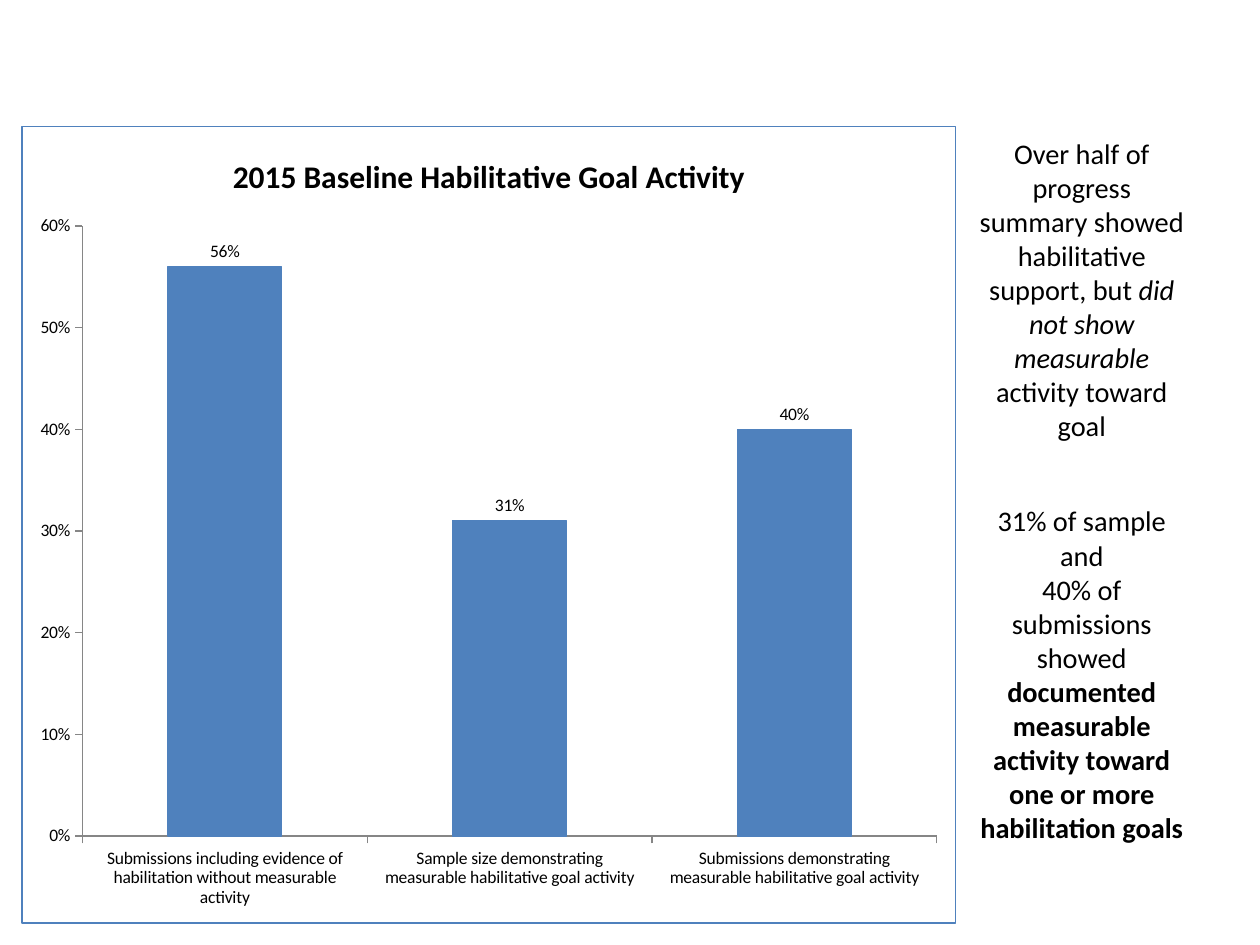
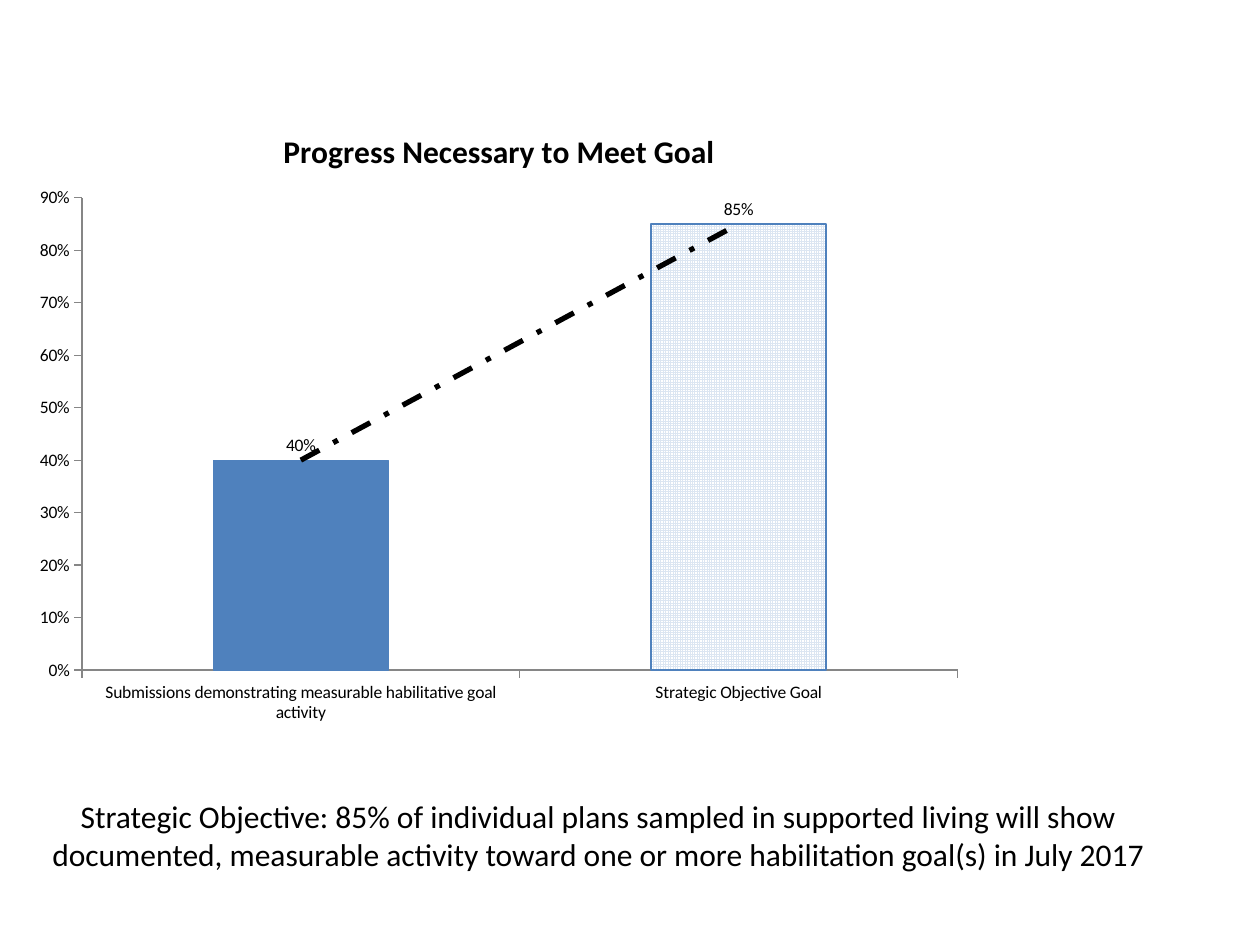
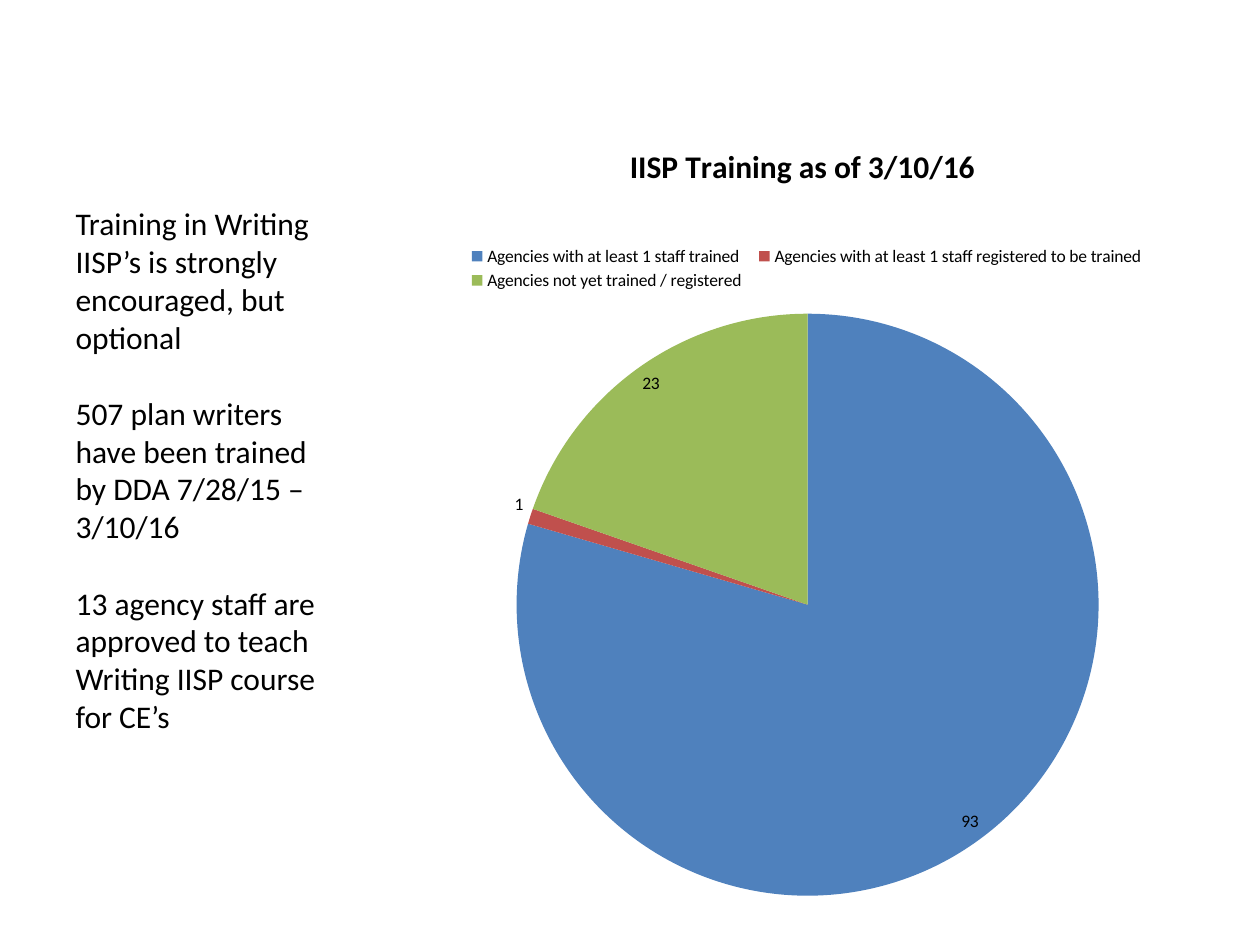
from dataclasses import dataclass

from lxml import etree
from pptx import Presentation
from pptx.chart.data import CategoryChartData
from pptx.dml.color import RGBColor
from pptx.enum.chart import XL_CHART_TYPE as ChartType
from pptx.enum.chart import XL_LABEL_POSITION as LabelPosition
from pptx.enum.chart import XL_LEGEND_POSITION as LegendPosition
from pptx.enum.chart import XL_TICK_MARK as TickMark
from pptx.enum.dml import MSO_PATTERN as Pattern
from pptx.enum.text import MSO_ANCHOR as Anchor
from pptx.enum.text import MSO_AUTO_SIZE as AutoSize
from pptx.enum.text import PP_ALIGN as Align
from pptx.oxml import parse_xml
from pptx.oxml.ns import nsdecls, qn
from pptx.util import Inches, Pt


@dataclass(frozen=True)
class Theme:
    font: str = "Calibri"
    text: RGBColor = RGBColor(0, 0, 0)
    blue: RGBColor = RGBColor(0x4F, 0x81, 0xBD)
    red: RGBColor = RGBColor(0xC0, 0x50, 0x4D)
    green: RGBColor = RGBColor(0x9B, 0xBB, 0x59)
    pale: RGBColor = RGBColor(0xDC, 0xE6, 0xF2)
    white: RGBColor = RGBColor(0xFF, 0xFF, 0xFF)
    axis: RGBColor = RGBColor(0x86, 0x86, 0x86)
    title_size: float = 18
    narrow_size: float = 16.2
    chart_size: float = 10
    thin: float = 0.75


THEME = Theme()
TITLE_ONLY = 5


def style_font(font, size, bold=None):
    font.name = THEME.font
    font.size = Pt(size)
    font.color.rgb = THEME.text
    font.bold = bold


def add_slide(deck):
    return deck.slides.add_slide(deck.slide_layouts[TITLE_ONLY])


def write_title(slide, rect, paragraphs, size=THEME.title_size,
                align=Align.CENTER, top_margin=None):
    """Fill the title with (space before, spans); each span is (words, style).

    The text is centred vertically unless top_margin is given.
    """
    box = slide.shapes.title
    box.left, box.top, box.width, box.height = map(Inches, rect)
    frame = box.text_frame
    frame.word_wrap = True
    frame.auto_size = AutoSize.NONE
    frame.vertical_anchor = Anchor.MIDDLE
    if top_margin is not None:
        frame.vertical_anchor = Anchor.TOP
        frame.margin_top = Inches(top_margin)
    for number, (space, spans) in enumerate(paragraphs):
        para = frame.add_paragraph() if number else frame.paragraphs[0]
        para.alignment = align
        para.space_before = Pt(space)
        style_font(para.font, size)
        for words, style in spans:
            run = para.add_run()
            run.text = words
            style_font(run.font, size)
            if style:
                setattr(run.font, style, True)


def set_layout(part, index, chart_rect, rect, target=""):
    """Fix a chart part at rect, given in inches on the slide."""
    old = part.find(qn("c:layout"))
    if old is not None:
        part.remove(old)
    left, top, width, height = chart_rect
    shares = {
        "x": (rect[0] - left) / width,
        "y": (rect[1] - top) / height,
        "w": rect[2] / width,
        "h": rect[3] / height,
    }
    layout = parse_xml(f'<c:layout {nsdecls("c")}><c:manualLayout/></c:layout>')
    values = {"layoutTarget": target} if target else {}
    values.update(xMode="edge", yMode="edge")
    values.update((name, f"{share:.4f}") for name, share in shares.items())
    for name, value in values.items():
        etree.SubElement(layout[0], qn(f"c:{name}")).set("val", value)
    part.insert(index, layout)


def set_border(chart, color=None):
    line = "<a:noFill/>"
    if color is not None:
        line = f'<a:solidFill><a:srgbClr val="{color}"/></a:solidFill>'
    chart.element.find(qn("c:chart")).addnext(parse_xml(
        f'<c:spPr {nsdecls("c", "a")}><a:noFill/>'
        f'<a:ln w="{Pt(THEME.thin)}">{line}</a:ln></c:spPr>'))


def add_chart(slide, kind, rect, plot_rect, title, values, number_format,
              label_position):
    """Add a chart of one series, values being {category: value}."""
    data = CategoryChartData(number_format=number_format)
    data.categories = list(values)
    data.add_series("Series 1", list(values.values()))
    chart = slide.shapes.add_chart(kind, *map(Inches, rect), data).chart
    style_font(chart.font, THEME.chart_size)
    chart.has_legend = False
    chart.has_title = True
    chart.chart_title.include_in_layout = False
    heading = chart.chart_title.text_frame
    heading.text = title
    style_font(heading.paragraphs[0].font, THEME.title_size, bold=True)

    plot = chart.plots[0]
    plot.has_data_labels = True
    labels = plot.series[0].data_labels
    labels.show_value = True
    labels.number_format = number_format
    labels.number_format_is_linked = False
    labels.position = label_position
    style_font(labels.font, THEME.chart_size)
    plot_area = next(chart.element.iter(qn("c:plotArea")))
    set_layout(plot_area, 0, rect, plot_rect, "inner")
    return chart


def add_percent_columns(slide, rect, plot_rect, title, values, maximum):
    chart = add_chart(slide, ChartType.COLUMN_CLUSTERED, rect, plot_rect, title,
                      values, "0%", LabelPosition.OUTSIDE_END)
    plot = chart.plots[0]
    plot.gap_width = 150
    plot.vary_by_categories = False
    columns = plot.series[0].format
    columns.fill.solid()
    columns.fill.fore_color.rgb = THEME.blue
    columns.line.color.rgb = THEME.blue
    columns.line.width = Pt(THEME.thin)
    for axis in (chart.category_axis, chart.value_axis):
        axis.has_major_gridlines = False
        axis.major_tick_mark = TickMark.OUTSIDE
        axis.minor_tick_mark = TickMark.NONE
        axis.format.line.color.rgb = THEME.axis
        axis.format.line.width = Pt(THEME.thin)
        style_font(axis.tick_labels.font, THEME.chart_size)
    scale = chart.value_axis
    scale.minimum_scale, scale.maximum_scale, scale.major_unit = 0, maximum, 0.1
    scale.tick_labels.number_format = "0%"
    scale.tick_labels.number_format_is_linked = False
    return chart


def mark_as_goal(point):
    fill = point.format.fill
    fill.patterned()
    fill.pattern = Pattern.SMALL_GRID
    fill.fore_color.rgb = THEME.pale
    fill.back_color.rgb = THEME.white
    point.format.line.color.rgb = THEME.blue
    point.format.line.width = Pt(THEME.thin)


def add_trend_line(chart):
    next(chart.element.iter(qn("c:cat"))).addprevious(parse_xml(
        f'<c:trendline {nsdecls("c", "a")}><c:spPr><a:ln w="{Pt(3)}">'
        f'<a:solidFill><a:srgbClr val="{THEME.text}"/></a:solidFill>'
        '<a:prstDash val="dashDot"/></a:ln></c:spPr>'
        '<c:trendlineType val="linear"/><c:dispRSqr val="0"/>'
        '<c:dispEq val="0"/></c:trendline>'))


def build_baseline(deck):
    slide = add_slide(deck)
    write_title(slide, (7.67, 0.83, 1.83, 6.58), [
        (0, [("Over half of progress summary showed habilitative support, but ", None),
             ("did not show measurable", "italic"),
             (" activity toward goal", None)]),
        (35, [("31% of sample", None)]),
        (0, [("and", None)]),
        (0, [("40% of submissions showed ", None),
             ("documented measurable activity toward one or more habilitation goals",
              "bold")]),
    ], size=THEME.narrow_size, top_margin=0.25)
    chart = add_percent_columns(
        slide, (0.17, 1, 7.42, 6.33), (0.65, 1.79, 6.79, 4.85),
        "2015 Baseline Habilitative Goal Activity", {
            "Submissions including evidence of habilitation without measurable activity": 0.56,
            "Sample size demonstrating measurable habilitative goal activity": 0.31,
            "Submissions demonstrating measurable habilitative goal activity": 0.4,
        }, maximum=0.6)
    set_border(chart, THEME.blue)


def build_progress(deck):
    slide = add_slide(deck)
    write_title(slide, (0.25, 6, 9, 1.25), [
        (0, [("Strategic Objective: 85% of individual plans sampled in supported "
              "living will show documented, measurable activity toward one or more "
              "habilitation goal(s) in July 2017", None)]),
    ])
    chart = add_percent_columns(
        slide, (0.17, 0.83, 7.58, 5), (0.65, 1.57, 6.95, 3.75),
        "Progress Necessary to Meet Goal", {
            "Submissions demonstrating measurable habilitative goal activity": 0.4,
            "Strategic Objective Goal": 0.85,
        }, maximum=0.9)
    mark_as_goal(chart.plots[0].series[0].points[1])
    add_trend_line(chart)
    set_border(chart)


def build_training(deck):
    slide = add_slide(deck)
    write_title(slide, (0.5, 1, 2.25, 6), [
        (0, [("Training in Writing IISP’s is strongly encouraged, but optional", None)]),
        (22, [("507 plan writers have been trained by DDA 7/28/15 – 3/10/16", None)]),
        (22, [("13 agency staff are approved to teach Writing IISP course for CE’s",
               None)]),
    ], align=Align.LEFT, top_margin=0.62)
    rect = (2.83, 0.92, 7.08, 6.33)
    chart = add_chart(
        slide, ChartType.PIE, rect, (4.1, 2.49, 4.62, 4.62),
        "IISP Training as of 3/10/16", {
            "Agencies with at least 1 staff trained": 93,
            "Agencies with at least 1 staff registered to be trained": 1,
            "Agencies not yet trained / registered": 23,
        }, "General", LabelPosition.BEST_FIT)
    plot = chart.plots[0]
    plot.vary_by_categories = True
    for number, color in enumerate((THEME.blue, THEME.red, THEME.green)):
        fill = plot.series[0].points[number].format.fill
        fill.solid()
        fill.fore_color.rgb = color
    chart.has_legend = True
    legend = chart.legend
    legend.position = LegendPosition.TOP
    legend.include_in_layout = False
    style_font(legend.font, THEME.chart_size)
    set_layout(next(chart.element.iter(qn("c:legend"))), 1, rect,
               (3.65, 1.92, 5.5, 0.42))
    set_border(chart)


def main():
    deck = Presentation()
    deck.slide_width, deck.slide_height = Inches(10), Inches(7.5)
    build_baseline(deck)
    build_progress(deck)
    build_training(deck)
    deck.save("out.pptx")


if __name__ == "__main__":
    main()
